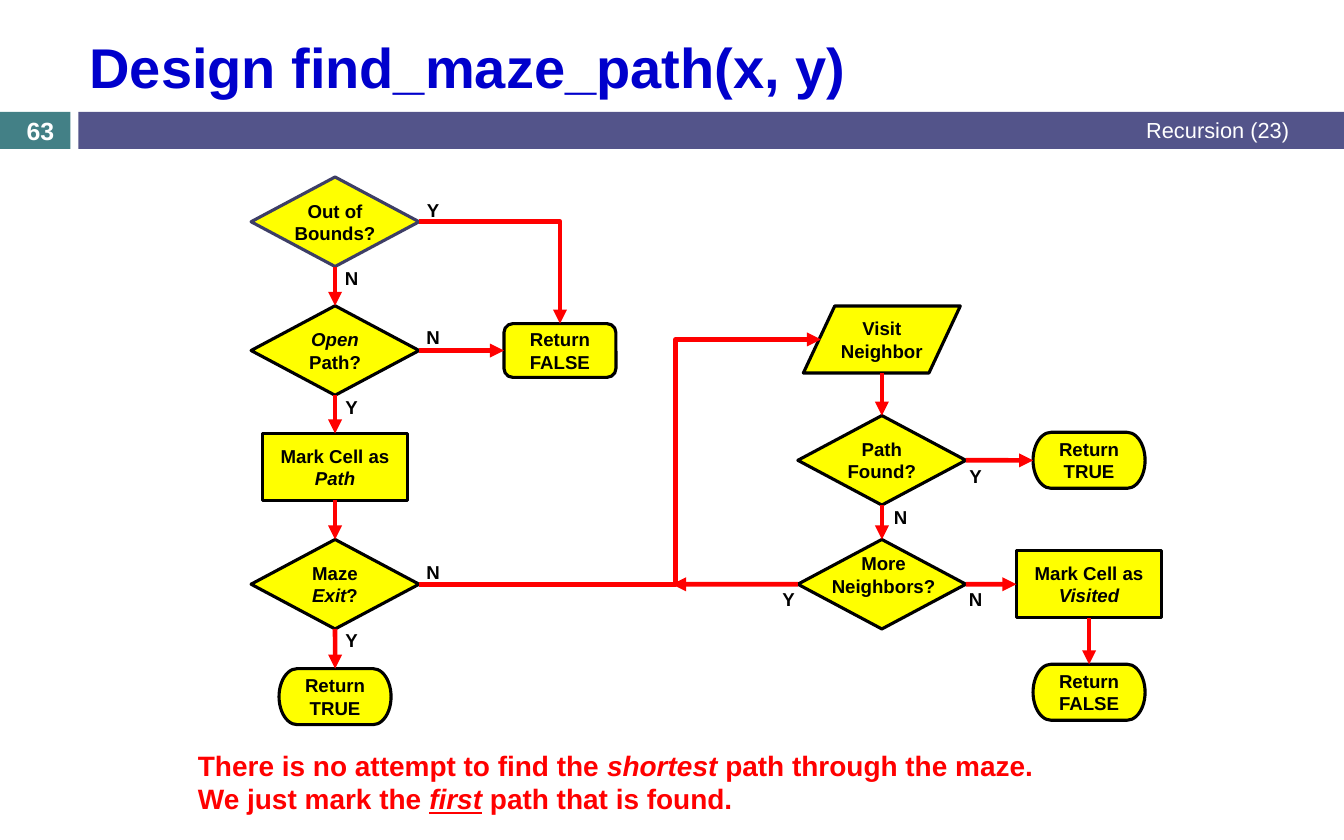
from dataclasses import dataclass

from lxml.etree import SubElement
from pptx import Presentation
from pptx.dml.color import RGBColor
from pptx.enum.shapes import MSO_CONNECTOR, MSO_SHAPE
from pptx.enum.text import MSO_ANCHOR, PP_ALIGN
from pptx.oxml.ns import qn
from pptx.util import Cm, Pt


@dataclass(frozen=True)
class Theme:
    font: str = "Arial"
    title: str = "0000CC"
    teal: str = "438086"
    slate: str = "53548A"
    edge: str = "3D3E66"
    red: str = "FF0000"
    fill: str = "FFFF00"
    black: str = "000000"
    white: str = "FFFFFF"
    head: int = 36
    note: int = 18
    page: int = 16
    foot: int = 14
    small: int = 12


T = Theme()
TOP, LEFT, BOTTOM, RIGHT = range(4)
ITALIC = {"italic": True}
# Kind of flowchart node: preset shape, width, height, side inset
DECIDE = MSO_SHAPE.FLOWCHART_DECISION, 3.81, 2.03, 0
STEP = MSO_SHAPE.FLOWCHART_PROCESS, 3.3, 1.52, 0.25
END = MSO_SHAPE.FLOWCHART_TERMINATOR, 2.54, 1.27, 0.25
ROUND = MSO_SHAPE.FLOWCHART_ALTERNATE_PROCESS, 2.54, 1.22, 0.25
DATA = MSO_SHAPE.FLOWCHART_DATA, 3.56, 1.52, 0


def put(item, **values):
    for name, value in values.items():
        setattr(item, name, value)


def write(shape, lines, size, color, align=PP_ALIGN.CENTER, bold=True,
          inset=0.25, **frame):
    """Each line is a list of runs: plain text or (text, font values)."""
    text = shape.text_frame
    pad = {"margin_left": Cm(inset), "margin_right": Cm(inset),
           "margin_top": Cm(inset / 2), "margin_bottom": Cm(inset / 2)}
    put(text, **{"word_wrap": True, "vertical_anchor": MSO_ANCHOR.MIDDLE,
                 **pad, **frame})
    for i, line in enumerate(lines):
        para = text.add_paragraph() if i else text.paragraphs[0]
        para.alignment = align
        for part in line:
            words, style = (part, {}) if isinstance(part, str) else part
            run = para.add_run()
            run.text = words
            put(run.font, **{"name": T.font, "size": Pt(size),
                             "bold": bold, **style})
            run.font.color.rgb = RGBColor.from_string(color)


def box(shapes, area, lines, size, color, **style):
    write(shapes.add_textbox(*map(Cm, area)), lines, size, color, **style)


def bar(shapes, area, color):
    shape = shapes.add_shape(MSO_SHAPE.RECTANGLE, *map(Cm, area))
    shape.shadow.inherit = False
    shape.fill.solid()
    shape.fill.fore_color.rgb = RGBColor.from_string(color)
    shape.line.fill.background()


def node(shapes, kind, x, y, *lines, edge=T.black):
    """Add a flowchart node centred at x, y."""
    form, wide, high, inset = kind
    area = x - wide / 2, y - high / 2, wide, high
    shape = shapes.add_shape(form, *map(Cm, area))
    shape.shadow.inherit = False
    shape.fill.solid()
    shape.fill.fore_color.rgb = RGBColor.from_string(T.fill)
    shape.line.color.rgb = RGBColor.from_string(edge)
    shape.line.width = Pt(2)
    write(shape, lines, T.small, T.black, inset=inset)
    return shape


def link(shapes, begin=None, end=None, start=(0, 0), stop=(0, 0),
         kind=MSO_CONNECTOR.STRAIGHT):
    """Add an arrow; begin and end are (node, side), start and stop points."""
    line = shapes.add_connector(kind, *map(Cm, start + stop))
    if begin:
        line.begin_connect(*begin)
    if end:
        line.end_connect(*end)
    line.line.color.rgb = RGBColor.from_string(T.red)
    line.line.width = Pt(3)
    props = line._element.spPr
    SubElement(props.find(qn("a:ln")), qn("a:tailEnd"), type="triangle")
    SubElement(props, qn("a:effectLst"))
    return props.find(qn("a:prstGeom"))


def frame(slide):
    shapes = slide.shapes
    bar(shapes, (0, 2.54, 1.6, 0.84), T.teal)
    bar(shapes, (1.78, 2.54, 28.7, 0.84), T.slate)
    title = shapes.title
    put(title, left=Cm(1.78), top=Cm(0.48), width=Cm(27.71), height=Cm(2.03))
    write(title, [["Design find_maze_path(x, y)"]], T.head, T.title,
          align=PP_ALIGN.LEFT)
    box(shapes, (0, 2.57, 1.83, 0.76), [["63"]], T.page, T.white)
    box(shapes, (11.43, 2.51, 18.06, 0.89), [["Recursion (23)"]], T.foot,
        T.white, align=PP_ALIGN.RIGHT, bold=False)
    box(shapes, (4.24, 16.84, 22.23, 1.8), [
        ["There is no attempt to find the ", ("shortest ", ITALIC),
         "path through the maze."],
        ["We just mark the ", ("first", {"italic": True, "underline": True}),
         " path that is found."],
    ], T.note, T.red, align=PP_ALIGN.LEFT, vertical_anchor=MSO_ANCHOR.TOP)


def chart(shapes):
    main, side, far = 7.6, 20, 24.7
    row = 13.25

    bound = node(shapes, DECIDE, main, 5.03, ["Out of Bounds?"], edge=T.edge)
    free = node(shapes, DECIDE, main, 7.95, [("Open", ITALIC), " Path?"])
    mark = node(shapes, STEP, main, 10.59, ["Mark Cell as ", ("Path", ITALIC)])
    leave = node(shapes, DECIDE, main, row, ["Maze ", ("Exit", ITALIC), "?"])
    done = node(shapes, END, main, 15.8, ["Return TRUE"])
    fail = node(shapes, ROUND, 12.7, 7.95, ["Return FALSE"])
    node(shapes, DATA, side, 7.7, ["Visit"], ["Neighbor"])
    found = node(shapes, DECIDE, side, 10.44, ["Path Found?"])
    more = node(shapes, DECIDE, side, row)
    box(shapes, (18.59, 12.4, 2.9, 1.27), [["More"], ["Neighbors?"]],
        T.small, T.black, word_wrap=False)
    true = node(shapes, END, far, 10.44, ["Return TRUE"])
    seen = node(shapes, STEP, far, row, ["Mark Cell as ", ("Visited", ITALIC)])
    false = node(shapes, END, far, 15.7, ["Return FALSE"])

    down = [(bound, free), (free, mark), (mark, leave), (leave, done),
            (found, more), (seen, false)]
    for upper, lower in down:
        link(shapes, (upper, BOTTOM), (lower, TOP))
    for near, away in [(free, fail), (found, true), (more, seen)]:
        link(shapes, (near, RIGHT), (away, LEFT))
    link(shapes, end=(found, TOP), start=(side, 8.46))
    link(shapes, (more, LEFT), stop=(15.24, row))

    bend = link(shapes, (bound, RIGHT), (fail, TOP), kind=MSO_CONNECTOR.ELBOW)
    bend.set("prst", "bentConnector2")
    turn = link(shapes, start=(9.5, row), stop=(18.62, 7.7),
                kind=MSO_CONNECTOR.ELBOW)
    SubElement(turn.find(qn("a:avLst")), qn("a:gd"), name="adj1",
               fmla="val 63900")

    tags = [("N", 7.62, 6.05), ("Y", 7.62, 8.97), ("Y", 7.62, 14.27),
            ("Y", 9.47, 4.5), ("N", 9.47, 7.39), ("N", 9.47, 12.73),
            ("Y", 21.77, 10.54), ("N", 21.77, 13.34), ("N", 20.07, 11.48),
            ("Y", 17.53, 13.34)]
    for word, x, y in tags:
        box(shapes, (x, y, 0.71, 0.51), [[word]], T.small, T.black, inset=0)


def main():
    deck = Presentation()
    put(deck, slide_width=Cm(30.48), slide_height=Cm(19.05))
    slide = deck.slides.add_slide(deck.slide_layouts[5])
    frame(slide)
    chart(slide.shapes)
    deck.save("out.pptx")


if __name__ == "__main__":
    main()
